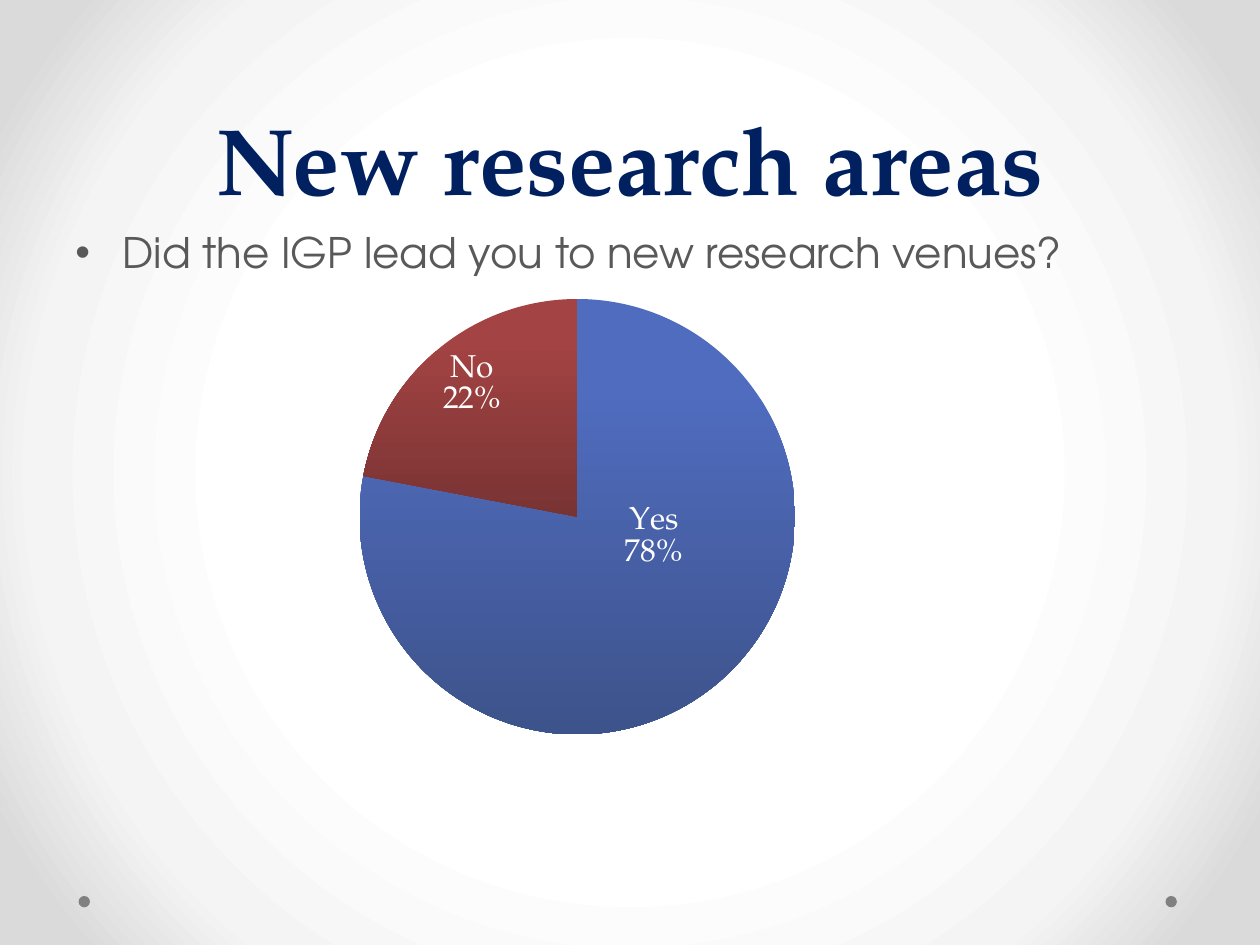
from lxml import etree
from pptx import Presentation
from pptx.chart.data import CategoryChartData
from pptx.dml.color import RGBColor
from pptx.enum.chart import XL_CHART_TYPE, XL_LABEL_POSITION
from pptx.enum.shapes import MSO_SHAPE
from pptx.enum.text import MSO_ANCHOR, PP_ALIGN
from pptx.oxml import parse_xml
from pptx.oxml.ns import nsdecls, qn
from pptx.util import Pt

PIE = XL_CHART_TYPE.PIE
CENTER_LABEL = XL_LABEL_POSITION.CENTER
INSIDE_END = XL_LABEL_POSITION.INSIDE_END
OVAL = MSO_SHAPE.OVAL
TOP, BOTTOM = MSO_ANCHOR.TOP, MSO_ANCHOR.BOTTOM
LEFT, CENTER = PP_ALIGN.LEFT, PP_ALIGN.CENTER

NAVY = RGBColor(0x00, 0x20, 0x60)
TEXT_GRAY = RGBColor(0x59, 0x59, 0x59)
DOT_GRAY = RGBColor(0x80, 0x80, 0x80)
WHITE = RGBColor(0xFF, 0xFF, 0xFF)
BLACK = RGBColor(0x00, 0x00, 0x00)
SLICE_COLORS = [
    (RGBColor(0x50, 0x6C, 0xBF), RGBColor(0x3D, 0x53, 0x8B)),
    (RGBColor(0xA3, 0x43, 0x43), RGBColor(0x79, 0x33, 0x33)),
]
BACKDROP_STOPS = [(50, "FFFFFF"), (76, "F4F4F4"), (92, "DADADA")]

SERIF = "TeX Gyre Pagella"
SANS = "TeX Gyre Adventor"


def set_format(target, values):
    for name, value in values.items():
        setattr(target, name, value)


def set_font(font, color, **values):
    set_format(font, values)
    font.color.rgb = color


def paint_backdrop(slide):
    """Radial gradient, white in the middle."""
    slide.background.fill.solid()
    solid = slide.background._cSld.find(".//" + qn("a:solidFill"))
    stops = "".join(
        f'<a:gs pos="{pos * 1000}"><a:srgbClr val="{color}"/></a:gs>'
        for pos, color in BACKDROP_STOPS
    )
    gradient = parse_xml(
        f'<a:gradFill {nsdecls("a")} rotWithShape="1"><a:gsLst>{stops}</a:gsLst>'
        '<a:path path="circle"><a:fillToRect l="50000" t="50000" r="50000" b="50000"/>'
        "</a:path></a:gradFill>"
    )
    solid.getparent().replace(solid, gradient)


def add_dot(slide, left):
    dot = slide.shapes.add_shape(OVAL, Pt(left), Pt(512), Pt(6.5), Pt(6.5))
    dot.shadow.inherit = False
    dot.fill.solid()
    dot.fill.fore_color.rgb = DOT_GRAY
    dot.line.fill.background()


def add_text(slide, text, top, height, anchor, paragraph_format, color, **font):
    box = slide.shapes.add_textbox(Pt(36), Pt(top), Pt(648), Pt(height))
    set_format(box.text_frame, {"word_wrap": True, "vertical_anchor": anchor})
    paragraph = box.text_frame.paragraphs[0]
    set_format(paragraph, paragraph_format)
    run = paragraph.add_run()
    run.text = text
    set_font(run.font, color, **font)
    return paragraph


def add_bullet(paragraph, indent):
    properties = paragraph._p.get_or_add_pPr()
    properties.set("marL", str(Pt(indent)))
    properties.set("indent", str(-Pt(indent)))
    etree.SubElement(properties, qn("a:buFont"), typeface="Arial")
    etree.SubElement(properties, qn("a:buChar"), char="•")


def manual_layout(**values):
    items = "".join(f'<c:{name} val="{value}"/>' for name, value in values.items())
    return parse_xml(
        f'<c:layout {nsdecls("c")}><c:manualLayout>{items}</c:manualLayout></c:layout>'
    )


def show_name_and_percent(labels):
    """Show category and percentage on two lines."""
    shown = {"showVal": 0, "showCatName": 1, "showPercent": 1}
    for name, value in shown.items():
        labels.find(qn(f"c:{name}")).set("val", str(value))
    separator = etree.Element(qn("c:separator"))
    separator.text = "\n"
    labels.find(qn("c:showBubbleSize")).addnext(separator)


def add_pie(slide):
    data = CategoryChartData()
    data.categories = ["Yes", "No"]
    data.add_series("Series 1", [78, 22])
    chart = slide.shapes.add_chart(
        PIE, Pt(132), Pt(162), Pt(408), Pt(293), data
    ).chart
    set_format(chart, {"has_legend": False, "has_title": False})
    set_font(chart.font, BLACK, name=SERIF, size=Pt(10))

    # Place the pie within the chart
    plot_area = chart._chartSpace.find(".//" + qn("c:plotArea"))
    for layout in plot_area.findall(qn("c:layout")):
        plot_area.remove(layout)
    plot_area.insert(0, manual_layout(
        layoutTarget="inner", xMode="edge", yMode="edge", x=0.18, y=0.03, w=0.61, h=0.85
    ))

    # Slices shade from top to bottom
    plot = chart.plots[0]
    plot.vary_by_categories = True
    series = plot.series[0]
    for index, colors in enumerate(SLICE_COLORS):
        fill = series.points[index].format.fill
        fill.gradient()
        fill.gradient_angle = 270
        for stop, color, position in zip(fill.gradient_stops, colors, (0.2, 1)):
            stop.color.rgb = color
            stop.position = position

    # Labels, with the one for Yes raised
    labels = series.data_labels
    yes_label = series.points[0].data_label
    for label, position in ((labels, INSIDE_END), (yes_label, CENTER_LABEL)):
        set_font(label.font, WHITE, name=SERIF, size=Pt(18))
        label.position = position
    all_labels = series._element.find(qn("c:dLbls"))
    yes_element = all_labels.find(qn("c:dLbl"))
    for element in (all_labels, yes_element):
        show_name_and_percent(element)
    yes_element.insert(1, manual_layout(x=0.01, y=-0.12))


def main():
    presentation = Presentation()
    set_format(presentation, {"slide_width": Pt(720), "slide_height": Pt(540)})
    slide = presentation.slides.add_slide(presentation.slide_layouts[6])

    # Backdrop
    paint_backdrop(slide)
    for left in (666, 44.9):
        add_dot(slide, left)

    # Title and question
    add_text(slide, "New research areas", 0, 126, BOTTOM,
             {"alignment": CENTER, "line_spacing": Pt(58)},
             NAVY, name=SERIF, size=Pt(54), bold=True)
    question = add_text(slide, "Did the IGP lead you to new research venues?",
                        126, 57.6, TOP,
                        {"alignment": LEFT, "space_before": Pt(4.8)},
                        TEXT_GRAY, name=SANS, size=Pt(24))
    add_bullet(question, 27)

    # Answers
    add_pie(slide)
    presentation.save("out.pptx")


if __name__ == "__main__":
    main()
